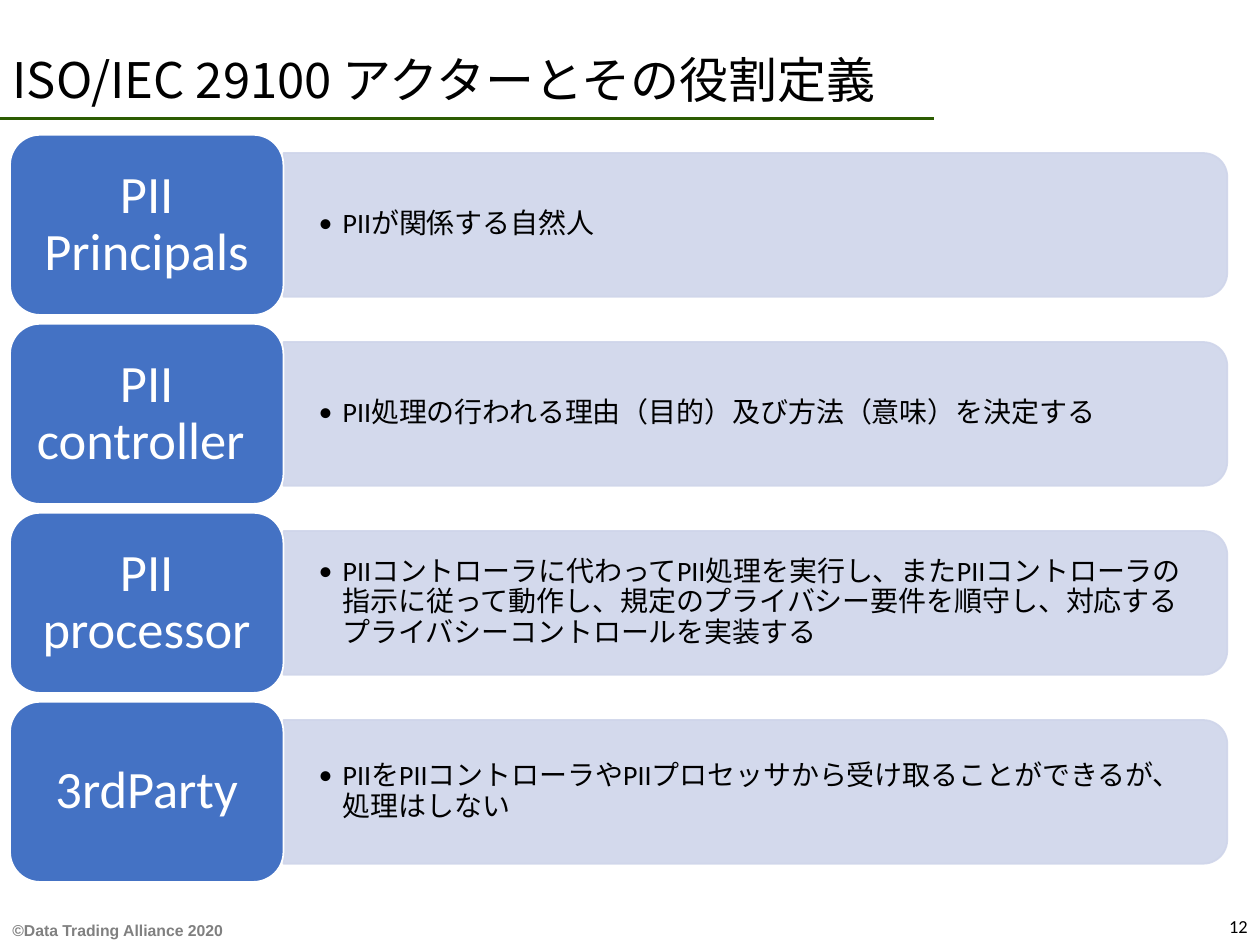
from lxml import etree
from pptx import Presentation
from pptx.dml.color import RGBColor
from pptx.enum.lang import MSO_LANGUAGE_ID
from pptx.enum.shapes import MSO_CONNECTOR, MSO_SHAPE
from pptx.enum.text import MSO_ANCHOR, MSO_AUTO_SIZE, PP_ALIGN
from pptx.oxml.ns import qn
from pptx.util import Pt

LEFT, MID, RIGHT = PP_ALIGN.LEFT, PP_ALIGN.CENTER, PP_ALIGN.RIGHT
CENTER, BOTTOM = MSO_ANCHOR.MIDDLE, MSO_ANCHOR.BOTTOM
ROUND, TAB = MSO_SHAPE.ROUNDED_RECTANGLE, MSO_SHAPE.ROUND_2_SAME_RECTANGLE
STRAIGHT, FIXED = MSO_CONNECTOR.STRAIGHT, MSO_AUTO_SIZE.NONE
JAPAN = MSO_LANGUAGE_ID.JAPANESE

TITLE = "ISO/IEC 29100 アクターとその役割定義"
CREDIT = "©Data Trading Alliance 2020"
PAGE = "12"
ACTORS = [
    ("PII Principals", "PIIが関係する自然人"),
    ("PII controller ", "PII処理の行われる理由（目的）及び方法（意味）を決定する"),
    ("PII processor", "PIIコントローラに代わってPII処理を実行し、またPIIコントローラの指示に従って動作し、"
     "規定のプライバシー要件を順守し、対応するプライバシーコントロールを実装する"),
    ("3rdParty", "PIIをPIIコントローラやPIIプロセッサから受け取ることができるが、処理はしない"),
]
COLORS = {"rule": "2C5C02", "panel": "CFD5EA", "label": "4472C4",
          "white": "FFFFFF", "black": "000000", "gray": "808080"}
CJK = "Noto Sans CJK JP"
FORMATS = {
    "title": {"name": CJK, "size": Pt(28), "language_id": JAPAN},
    "role": {"name": "Calibri", "size": Pt(16), "language_id": JAPAN},
    "label": {"name": "Calibri", "size": Pt(30)},
    "credit": {"name": "Arial", "size": Pt(9), "bold": True},
    "page": {"name": "Calibri", "size": Pt(10.5)},
}
TOP, STEP = 77.04, 108
LABEL_X, LABEL_W, LABEL_H = 5.76, 156.24, 102.96
PANEL_X, PANEL_W, PANEL_H = 162, 539.28, 82.08


def color(key):
    return RGBColor.from_string(COLORS[key])


def write(shape, text, style, ink, align=LEFT, anchor=CENTER,
          pad=(7.2, 3.6), wrap=True, space=None, bullet=False):
    frame = shape.text_frame
    values = {"word_wrap": wrap, "auto_size": FIXED, "vertical_anchor": anchor,
              "margin_left": Pt(pad[0]), "margin_right": Pt(pad[0]),
              "margin_top": Pt(pad[1]), "margin_bottom": Pt(pad[1])}
    for key, value in values.items():
        setattr(frame, key, value)
    para = frame.paragraphs[0]
    para.alignment, para.line_spacing = align, space
    if bullet:
        props = para._p.get_or_add_pPr()
        props.set("marL", str(Pt(13.68)))
        props.set("indent", str(Pt(-13.68)))
        etree.SubElement(props, qn("a:buFont"), typeface="Calibri")
        etree.SubElement(props, qn("a:buChar"), char="•")
    run = para.add_run()
    run.text = text
    for key, value in FORMATS[style].items():
        setattr(run.font, key, value)
    run.font.color.rgb = color(ink)
    etree.SubElement(run._r.get_or_add_rPr(), qn("a:ea"), typeface=CJK)


def fade(fill):
    for node in fill.iter(qn("a:srgbClr")):
        etree.SubElement(node, qn("a:alpha"), val="90000")


def box(x, y, w, h):
    return slide.shapes.add_textbox(Pt(x), Pt(y), Pt(w), Pt(h))


def block(kind, x, y, w, h, fill, line):
    shape = slide.shapes.add_shape(kind, Pt(x), Pt(y), Pt(w), Pt(h))
    shape.shadow.inherit = False
    shape.fill.solid()
    shape.fill.fore_color.rgb = color(fill)
    shape.line.color.rgb = color(line)
    shape.line.width = Pt(1)
    return shape


deck = Presentation()
deck.slide_width, deck.slide_height = Pt(720), Pt(540)
slide = deck.slides.add_slide(deck.slide_layouts[5])

title = slide.shapes.title
title.left, title.top, title.width, title.height = Pt(0), Pt(23.76), Pt(648.72), Pt(46.8)
write(title, TITLE, "title", "black", space=0.9)

rule = slide.shapes.add_connector(STRAIGHT, Pt(0), Pt(67.68), Pt(533.52), Pt(67.68))
rule.line.color.rgb = color("rule")
rule.line.width = Pt(1.5)
etree.SubElement(rule._element.spPr, qn("a:effectLst"))

for row, (name, role) in enumerate(ACTORS):
    top = TOP + row * STEP
    middle = top + LABEL_H / 2
    panel = block(TAB, PANEL_X + (PANEL_W - PANEL_H) / 2, middle - PANEL_W / 2,
                  PANEL_H, PANEL_W, "panel", "panel")
    panel.rotation = 90
    fade(panel._element.spPr)
    write(box(PANEL_X + 0.72, middle - 37.08, 534.96, 74.16), role, "role", "black",
          pad=(19.44, 10.08), space=0.9, bullet=True)
    label = block(ROUND, LABEL_X, top, LABEL_W, LABEL_H, "label", "white")
    write(label, name, "label", "white", align=MID, pad=(8, 4), space=0.9)

write(box(0, 522.72, 141.84, 18), CREDIT, "credit", "gray", anchor=BOTTOM, wrap=False)
write(box(558, 510.48, 162, 28.8), PAGE, "page", "black", align=RIGHT, anchor=BOTTOM)

deck.save("out.pptx")
